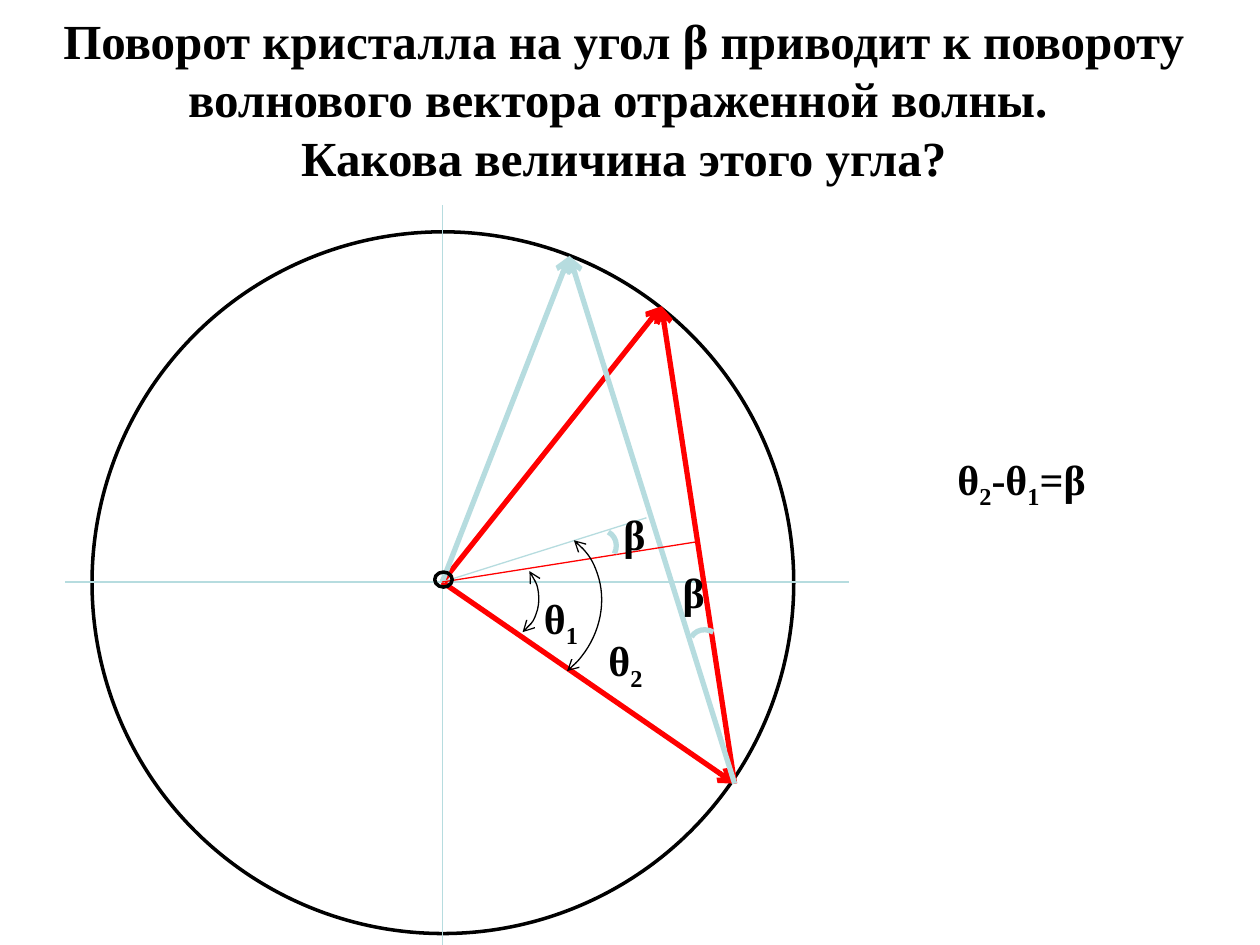
from lxml import etree
from pptx import Presentation
from pptx import util as u
from pptx.dml.color import RGBColor
from pptx.enum import shapes, text
from pptx.oxml.ns import qn

BLACK, WHITE, RED, PALE = "000000", "FFFFFF", "FF0000", "B6DCDF"

# Points of the vector diagram
ORIGIN = (252.7, 332.6)
INCIDENT = (419.8, 447.8)
REFLECTED = (378, 175)
TURNED = (325.4, 146.2)


def color(value):
    return RGBColor.from_string(value)


def style_line(shape, line_color, width, ends=()):
    shape.line.color.rgb = color(line_color)
    shape.line.width = u.Pt(width)
    line = shape.line._get_or_add_ln()
    for end in ends:
        etree.SubElement(line, qn(f"a:{end}"), type="arrow")


def add_line(page, start, stop, line_color, width=0.75, ends=()):
    line = page.shapes.add_connector(
        shapes.MSO_CONNECTOR.STRAIGHT, *map(u.Pt, start + stop))
    style_line(line, line_color, width, ends)
    etree.SubElement(line._element.spPr, qn("a:effectLst"))


def add_outline(page, kind, place, line_color, width, fill=None,
                rotation=0, adjust=(), ends=()):
    shape = page.shapes.add_shape(kind, *map(u.Pt, place))
    for index, value in enumerate(adjust):
        shape.adjustments[index] = value
    if fill:
        shape.fill.solid()
        shape.fill.fore_color.rgb = color(fill)
    else:
        shape.fill.background()
    style_line(shape, line_color, width, ends)
    shape.shadow.inherit = False
    shape.rotation = rotation


def add_text(page, content, place, size=24, align=text.PP_ALIGN.LEFT,
             wrap=True, fill=None):
    """Write one paragraph per line; digits become subscripts."""
    box = page.shapes.add_textbox(*map(u.Pt, place))
    if fill:
        box.fill.solid()
        box.fill.fore_color.rgb = color(fill)
    frame = box.text_frame
    frame.word_wrap = wrap
    frame.auto_size = text.MSO_AUTO_SIZE.SHAPE_TO_FIT_TEXT
    for index, row in enumerate(content.split("\n")):
        para = frame.add_paragraph() if index else frame.paragraphs[0]
        para.alignment = align
        for piece in split_digits(row):
            span = para.add_run()
            span.text = piece
            span.font.name = "Times New Roman"
            span.font.size = u.Pt(size)
            span.font.bold = True
            span.font.color.rgb = color(BLACK)
            if piece.isdigit():
                span.font._element.set("baseline", "-25000")


def split_digits(row):
    pieces = []
    for char in row:
        if pieces and pieces[-1].isdigit() == char.isdigit():
            pieces[-1] += char
        else:
            pieces.append(char)
    return pieces


def main():
    deck = Presentation()
    deck.slide_width, deck.slide_height = u.Pt(720), u.Pt(540)
    page = deck.slides.add_slide(deck.slide_layouts[6])
    oval, arc = shapes.MSO_SHAPE.OVAL, shapes.MSO_SHAPE.ARC

    # Circle and axes
    add_outline(page, oval, (52.6, 132.5, 401, 401), BLACK, 2, WHITE)
    add_line(page, (37.4, ORIGIN[1]), (485.3, ORIGIN[1]), PALE)
    add_line(page, (ORIGIN[0], 117.4), (ORIGIN[0], 559.4), PALE)

    # Wave vectors before and after the turn
    for start, stop, tint in (
            (ORIGIN, INCIDENT, RED), (ORIGIN, REFLECTED, RED),
            (INCIDENT, REFLECTED, RED),
            (ORIGIN, TURNED, PALE), (INCIDENT, TURNED, PALE)):
        add_line(page, start, stop, tint, 3, ["tailEnd"])

    # Crystal plane lines and origin mark
    add_line(page, ORIGIN, (369.4, 295.9), PALE)
    add_line(page, ORIGIN, (398.2, 309.6), RED)
    add_outline(page, oval, (248.4, 326.9, 10, 8.6), BLACK, 2)

    # Angle arcs
    both = ["headEnd", "tailEnd"]
    add_outline(page, arc, (257.8, 316.8, 51, 48.2), BLACK, 0.75,
                rotation=53, ends=both)
    add_outline(page, arc, (252.7, 298.1, 89.3, 98.6), BLACK, 0.75,
                rotation=38.4, adjust=(162, 9.09), ends=both)
    add_outline(page, arc, (334.8, 303.1, 17.3, 18.7), PALE, 3, rotation=26.9)
    add_outline(page, arc, (394.6, 359.3, 17.3, 18.7), PALE, 3, rotation=300.5)

    # Angle labels
    add_text(page, "θ1", (303.8, 334.8, 50.4, 36))
    add_text(page, "θ2", (340.6, 359.3, 41.8, 36))
    add_text(page, "β", (383, 320.4, 26.6, 36), wrap=False)
    add_text(page, "β", (349.2, 287.3, 26.6, 36), wrap=False)

    # Answer and title
    add_text(page, "θ2-θ1=β", (540, 255.6, 87.8, 36), wrap=False, fill=WHITE)
    add_text(page, "Поворот кристалла на угол β приводит к повороту "
             "волнового вектора отраженной волны. \n"
             "Какова величина этого угла?",
             (-3.6, 2.2, 720, 108.7), size=28,
             align=text.PP_ALIGN.CENTER, fill=WHITE)

    deck.save("out.pptx")


if __name__ == "__main__":
    main()
